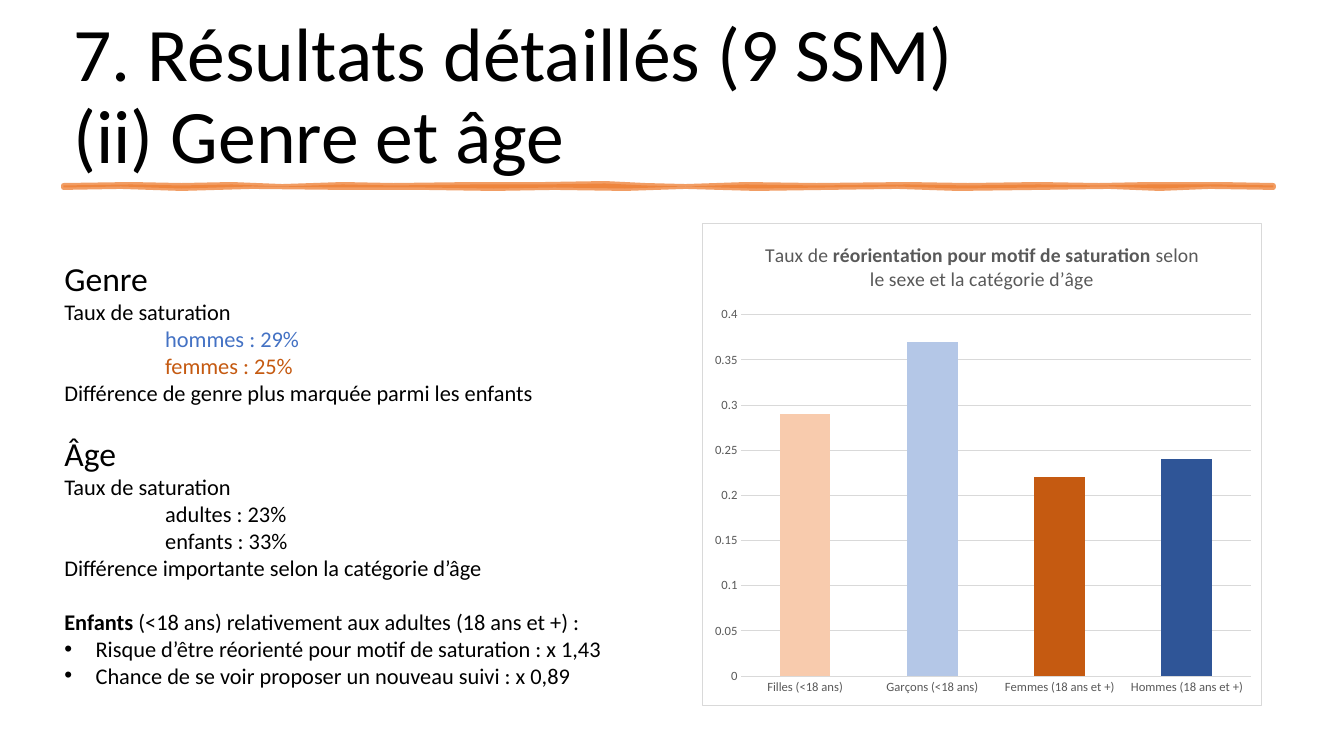
from dataclasses import dataclass

from lxml import etree
from pptx import Presentation, util as u
from pptx.chart import data as chart_data
from pptx.dml import color as dml
from pptx.enum import chart as chart_enum, text as text_enum
from pptx.oxml import ns, parse_xml

FONT = "Calibri"
COLORS = {
    "black": "000000", "white": "FFFFFF", "grey": "595959", "grid": "D9D9D9",
    "men": "4472C4", "women": "C55A11", "brush": "ED7D31",
    "girls_bar": "F8CBAD", "boys_bar": "B4C7E7", "men_bar": "2F5597",
}


@dataclass
class Span:
    words: str
    size: float = 16
    color: str = "black"
    bold: bool = False


@dataclass
class Para:
    spans: list[Span]
    indent: float = 0
    hanging: float = 0
    before: float = 0
    spacing: float = 1.0


@dataclass
class Bar:
    label: str
    value: float
    color: str


BLANK_LINE = 19.5
TITLE = [
    Para([Span("7. Résultats détaillés (9 SSM)\v(ii) Genre et âge", 54)], spacing=0.9),
]
FINDINGS = [
    Para([Span("Genre", 24)]),
    Para([Span("Taux de saturation")]),
    Para([Span("hommes : 29%", color="men")], indent=1),
    Para([Span("femmes : 25%", color="women")], indent=1),
    Para([Span("Différence de genre plus marquée parmi les enfants")]),
    Para([Span("Âge", 24)], before=BLANK_LINE),
    Para([Span("Taux de saturation")]),
    Para([Span("adultes : 23%")], indent=1),
    Para([Span("enfants : 33%")], indent=1),
    Para([Span("Différence importante selon la catégorie d’âge")]),
    Para([Span("Enfants", bold=True),
          Span(" (<18 ans) relativement aux adultes (18 ans et +) :")], before=BLANK_LINE),
    Para([Span("Risque d’être réorienté pour motif de saturation : x 1,43")], hanging=0.31),
    Para([Span("Chance de se voir proposer un nouveau suivi : x 0,89")], hanging=0.31),
]
CHART_TITLE = Para([
    Span("Taux de ", 14, "grey"),
    Span("réorientation pour motif de saturation", 14, "grey", True),
    Span(" selon le sexe et la catégorie d’âge", 14, "grey"),
])
BARS = [
    Bar("Filles (<18 ans)", 0.29, "girls_bar"),
    Bar("Garçons (<18 ans)", 0.37, "boys_bar"),
    Bar("Femmes (18 ans et +)", 0.22, "women"),
    Bar("Hommes (18 ans et +)", 0.24, "men_bar"),
]
BRUSH_TOP = [
    (0.63, 1.84), (1.3, 1.83), (1.8, 1.84), (2.3, 1.83), (2.8, 1.85), (3.4, 1.83),
    (3.9, 1.84), (4.7, 1.83), (5.4, 1.83), (6.0, 1.82), (6.4, 1.84), (6.8, 1.85),
    (7.4, 1.83), (8.1, 1.84), (9.0, 1.83), (9.6, 1.84), (10.3, 1.83), (10.9, 1.84),
    (11.4, 1.83), (12.1, 1.83), (12.63, 1.84),
]
BRUSH_BOTTOM = [
    (12.63, 1.86), (12.0, 1.85), (11.5, 1.87), (11.0, 1.85), (10.3, 1.86), (9.5, 1.87),
    (8.9, 1.85), (8.2, 1.86), (7.5, 1.87), (6.8, 1.85), (6.2, 1.87), (5.5, 1.86),
    (4.9, 1.87), (4.2, 1.86), (3.4, 1.86), (2.5, 1.85), (1.8, 1.87), (1.2, 1.85),
    (0.63, 1.86),
]


def rgb(name: str) -> dml.RGBColor:
    return dml.RGBColor.from_string(COLORS[name])


def style_font(font, size: float, color: str, bold: bool = False) -> None:
    font.name, font.size, font.bold = FONT, u.Pt(size), bold
    font.color.rgb = rgb(color)


def add_spans(paragraph, spans: list[Span]) -> None:
    for span in spans:
        for index, line in enumerate(span.words.split("\v")):
            if index:
                paragraph.add_line_break()
            run = paragraph.add_run()
            run.text = line
            style_font(run.font, span.size, span.color, span.bold)


def add_text(page, left: float, top: float, width: float, height: float,
             paras: list[Para], anchor) -> None:
    box = page.shapes.add_textbox(*map(u.Inches, (left, top, width, height)))
    frame = box.text_frame
    frame.word_wrap = True
    frame.vertical_anchor = anchor
    for index, para in enumerate(paras):
        paragraph = frame.add_paragraph() if index else frame.paragraphs[0]
        paragraph.line_spacing = para.spacing
        paragraph.space_before = u.Pt(para.before)
        add_spans(paragraph, para.spans)
        properties = paragraph._p.get_or_add_pPr()
        properties.set("marL", str(u.Inches(para.indent + para.hanging)))
        properties.set("indent", str(-u.Inches(para.hanging)))
        if para.hanging:
            etree.SubElement(properties, ns.qn("a:buFont"), typeface="Arial")
            etree.SubElement(properties, ns.qn("a:buChar"), char="•")


def add_brush_line(page) -> None:
    points = [(u.Inches(x), u.Inches(y)) for x, y in BRUSH_TOP + BRUSH_BOTTOM]
    builder = page.shapes.build_freeform(*points[0])
    builder.add_line_segments(points[1:], close=True)
    brush = builder.convert_to_shape()
    brush.shadow.inherit = False
    brush.fill.solid()
    brush.fill.fore_color.rgb = rgb("brush")
    brush.line.color.rgb = rgb("brush")
    brush.line.width = u.Pt(3.5)
    for color in brush.element.iter(ns.qn("a:srgbClr")):
        etree.SubElement(color, ns.qn("a:alpha"), val="75000")
    for line in brush.element.iter(ns.qn("a:ln")):
        etree.SubElement(line, ns.qn("a:round"))


def frame_chart(chart) -> None:
    space = chart.element
    space.find(ns.qn("c:chart")).addnext(parse_xml(
        f'<c:spPr {ns.nsdecls("c", "a")}>'
        f'<a:solidFill><a:srgbClr val="{COLORS["white"]}"/></a:solidFill>'
        f'<a:ln w="9525"><a:solidFill><a:srgbClr val="{COLORS["grid"]}"/></a:solidFill></a:ln>'
        '</c:spPr>'))
    area = next(space.iter(ns.qn("c:plotArea")))
    for layout in area.findall(ns.qn("c:layout")):
        area.remove(layout)
    layout = etree.Element(ns.qn("c:layout"))
    manual = etree.SubElement(layout, ns.qn("c:manualLayout"))
    settings = {"layoutTarget": "inner", "xMode": "edge", "yMode": "edge",
                "x": "0.07", "y": "0.19", "w": "0.91", "h": "0.75"}
    for tag, value in settings.items():
        etree.SubElement(manual, ns.qn(f"c:{tag}"), val=value)
    area.insert(0, layout)


def add_rate_chart(page) -> None:
    rates = chart_data.CategoryChartData()
    rates.categories = [bar.label for bar in BARS]
    rates.add_series("Taux", [bar.value for bar in BARS])
    chart = page.shapes.add_chart(
        chart_enum.XL_CHART_TYPE.COLUMN_STACKED,
        *map(u.Inches, (6.96, 2.21, 5.56, 4.79)), rates).chart
    style_font(chart.font, 10, "black")
    chart.has_legend = False
    add_spans(chart.chart_title.text_frame.paragraphs[0], CHART_TITLE.spans)
    chart.chart_title.include_in_layout = False

    plot = chart.plots[0]
    plot.gap_width, plot.overlap, plot.vary_by_categories = 150, 100, False
    for index, bar in enumerate(BARS):
        fill = plot.series[0].points[index].format.fill
        fill.solid()
        fill.fore_color.rgb = rgb(bar.color)

    for axis in (chart.category_axis, chart.value_axis):
        axis.major_tick_mark = axis.minor_tick_mark = chart_enum.XL_TICK_MARK.NONE
        style_font(axis.tick_labels.font, 9, "grey")
    values = chart.value_axis
    values.minimum_scale, values.maximum_scale, values.major_unit = 0, 0.4, 0.05
    values.format.line.fill.background()
    for line in (chart.category_axis.format.line, values.major_gridlines.format.line):
        line.color.rgb = rgb("grid")
        line.width = u.Pt(0.75)
    frame_chart(chart)


def main() -> None:
    deck = Presentation()
    deck.slide_width, deck.slide_height = u.Inches(13.33), u.Inches(7.5)
    page = deck.slides.add_slide(deck.slide_layouts[6])
    add_text(page, 0.63, 0.26, 12.05, 1.57, TITLE, text_enum.MSO_ANCHOR.BOTTOM)
    add_brush_line(page)
    add_rate_chart(page)
    add_text(page, 0.54, 2.51, 6.11, 4.41, FINDINGS, text_enum.MSO_ANCHOR.TOP)
    deck.save("out.pptx")


if __name__ == "__main__":
    main()
